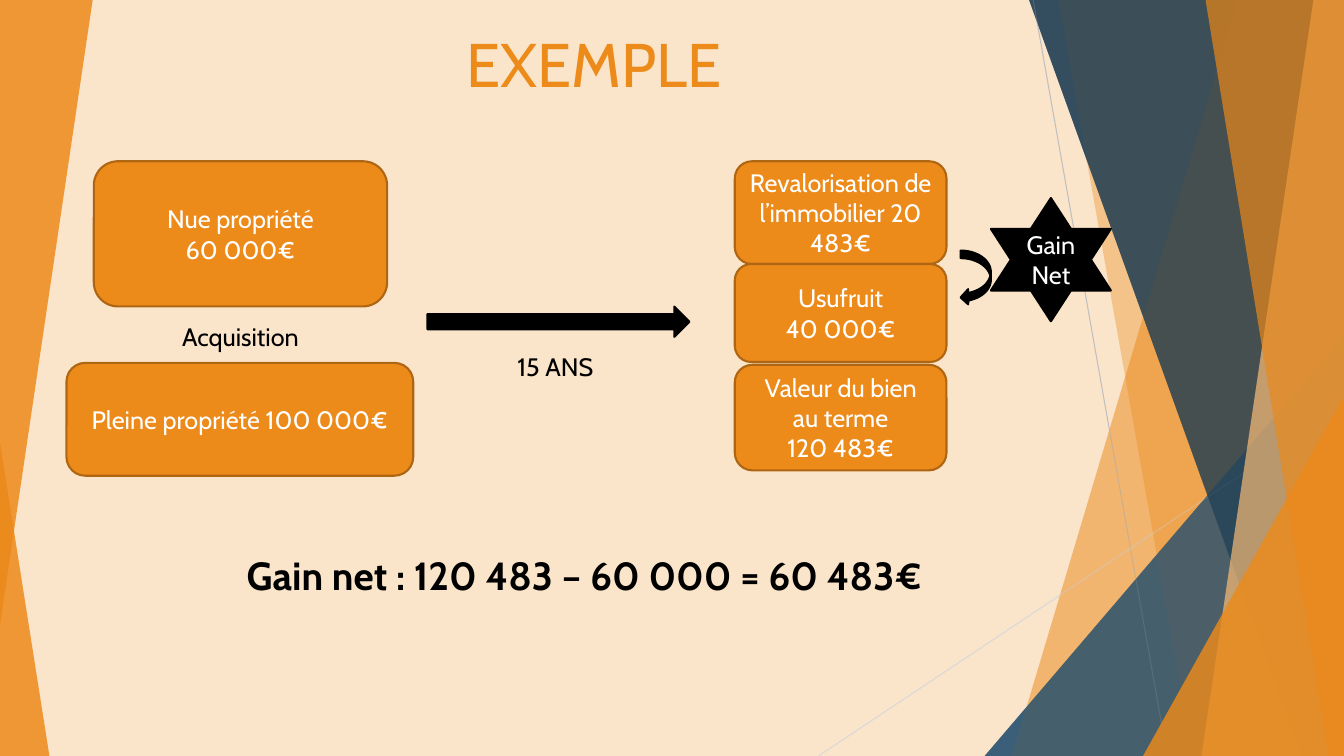
from dataclasses import dataclass

from lxml.etree import SubElement
from pptx import Presentation
from pptx.dml.color import RGBColor
from pptx.enum.shapes import MSO_CONNECTOR, MSO_SHAPE
from pptx.enum.text import MSO_ANCHOR, PP_ALIGN
from pptx.oxml.ns import qn
from pptx.util import Pt

FONT = "Cabin"
ORANGE, ORANGE_EDGE, PEACH = "EC8A1A", "AF6613", "F4B976"
CREAM, BLUE, NAVY = "FAE4CA", "2C5573", "214056"
BLACK, WHITE = "000000", "FFFFFF"
WIDTH, HEIGHT = 960, 540


@dataclass
class Band:
    top_x: float
    bottom_x: float
    fill: str
    opacity: int


@dataclass
class Wedge:
    left: float
    top: float
    width: float
    height: float
    apex: float
    fill: str
    opacity: int
    rotation: int = 0


@dataclass
class Ray:
    start: tuple[float, float]
    end: tuple[float, float]
    color: str


@dataclass
class Block:
    left: float
    top: float
    width: float
    height: float
    lines: tuple[str, ...] = ()
    preset: MSO_SHAPE = MSO_SHAPE.ROUNDED_RECTANGLE
    fill: str = ORANGE
    edge: str = ORANGE_EDGE


@dataclass
class Label:
    left: float
    top: float
    width: float
    height: float
    text: str
    size: int = 18
    bold: bool = False


RIGHT_FACETS = (
    Band(884.2, 722.9, ORANGE, 30),
    Band(756, 851.8, ORANGE, 20),
    Wedge(703.4, 239.8, 256.6, 300.2, 1, BLUE, 72),
    Band(735.1, 929.5, NAVY, 70),
    Band(938.2, 858.2, PEACH, 70),
    Band(861.1, 949, ORANGE, 65),
    Wedge(816.5, 283, 143.5, 257, 1, ORANGE, 80),
)
RAYS = (
    Ray((738, 0), (833.8, HEIGHT), "BFBFBF"),
    Ray((WIDTH, 290.2), (584.6, HEIGHT), "D9D9D9"),
)
BACKDROP = (
    *RIGHT_FACETS,
    Wedge(0, 316, 35.3, 224, 0, ORANGE, 85),
    *RAYS,
    *RIGHT_FACETS,
    Wedge(0, 0, 66.2, 446.4, 1, ORANGE, 85, 180),
)
RESULT_LEFT, RESULT_WIDTH = 524.9, 151.2
BLOCKS = (
    Block(67, 115.2, 209.5, 103.7, ("Nue propriété", "60 000€")),
    Block(47.5, 259.2, 247.7, 80.6, ("Pleine propriété 100 000€",)),
    Block(RESULT_LEFT, 115.2, RESULT_WIDTH, 73.4,
          ("Revalorisation de l’immobilier 20 483€",)),
    Block(RESULT_LEFT, 188.6, RESULT_WIDTH, 70, ("Usufruit", "40 000€")),
    Block(RESULT_LEFT, 260.6, RESULT_WIDTH, 75.4,
          ("Valeur du bien au terme", "120 483€")),
    Block(305.3, 219, 187.2, 21.6, (), MSO_SHAPE.RIGHT_ARROW, BLACK, BLACK),
    Block(707.8, 141.5, 85.7, 88, ("Gain Net",),
          MSO_SHAPE.STAR_6_POINT, BLACK, BLACK),
    Block(686.2, 179, 21.6, 38.9, (),
          MSO_SHAPE.CURVED_LEFT_ARROW, BLACK, BLACK),
)
LABELS = (
    Label(67, 226.1, 209.5, 28.8, "Acquisition"),
    Label(324.7, 247.2, 144, 28.8, "15 ANS"),
    Label(111.6, 390.2, 611.3, 149.8,
          "Gain net : 120 483 – 60 000 = 60 483€", 28, True),
)


def rgb(value: str) -> RGBColor:
    return RGBColor.from_string(value)


def write(frame, lines: tuple[str, ...], size: int, color: str,
          anchor: MSO_ANCHOR, bold: bool = False) -> None:
    frame.word_wrap = True
    frame.vertical_anchor = anchor
    for index, line in enumerate(lines):
        paragraph = frame.add_paragraph() if index else frame.paragraphs[0]
        paragraph.alignment = PP_ALIGN.CENTER
        run = paragraph.add_run()
        run.text = line
        run.font.name = FONT
        run.font.size = Pt(size)
        run.font.bold = bold
        run.font.color.rgb = rgb(color)


def fill_translucent(shape, fill: str, opacity: int) -> None:
    shape.shadow.inherit = False
    shape.fill.solid()
    shape.fill.fore_color.rgb = rgb(fill)
    shape.line.fill.background()
    color = shape.fill._xPr.find(qn("a:solidFill"))[0]
    SubElement(color, qn("a:alpha")).set("val", str(opacity * 1000))


def draw_band(shapes, band: Band) -> None:
    outline = shapes.build_freeform(Pt(band.top_x), 0)
    outline.add_line_segments([
        (Pt(WIDTH), 0), (Pt(WIDTH), Pt(HEIGHT)), (Pt(band.bottom_x), Pt(HEIGHT)),
    ])
    fill_translucent(outline.convert_to_shape(), band.fill, band.opacity)


def draw_wedge(shapes, wedge: Wedge) -> None:
    triangle = shapes.add_shape(
        MSO_SHAPE.ISOSCELES_TRIANGLE, Pt(wedge.left), Pt(wedge.top),
        Pt(wedge.width), Pt(wedge.height))
    triangle.adjustments[0] = wedge.apex
    triangle.rotation = wedge.rotation
    fill_translucent(triangle, wedge.fill, wedge.opacity)


def draw_ray(shapes, ray: Ray) -> None:
    line = shapes.add_connector(
        MSO_CONNECTOR.STRAIGHT, *map(Pt, ray.start), *map(Pt, ray.end))
    line.line.color.rgb = rgb(ray.color)
    line.line.width = Pt(0.75)
    SubElement(line._element.spPr, qn("a:effectLst"))


def draw_block(shapes, block: Block) -> None:
    shape = shapes.add_shape(block.preset, Pt(block.left), Pt(block.top),
                             Pt(block.width), Pt(block.height))
    shape.shadow.inherit = False
    shape.fill.solid()
    shape.fill.fore_color.rgb = rgb(block.fill)
    shape.line.color.rgb = rgb(block.edge)
    shape.line.width = Pt(1.5)
    write(shape.text_frame, block.lines, 18, WHITE, MSO_ANCHOR.MIDDLE)


def draw_label(shapes, label: Label) -> None:
    box = shapes.add_textbox(Pt(label.left), Pt(label.top),
                             Pt(label.width), Pt(label.height))
    write(box.text_frame, (label.text,), label.size, BLACK,
          MSO_ANCHOR.TOP, label.bold)


def main() -> None:
    deck = Presentation()
    deck.slide_width, deck.slide_height = Pt(WIDTH), Pt(HEIGHT)
    slide = deck.slides.add_slide(deck.slide_layouts[5])
    slide.background.fill.solid()
    slide.background.fill.fore_color.rgb = rgb(CREAM)
    title = slide.shapes.title
    title.left, title.top = Pt(118.8), Pt(0)
    title.width, title.height = Pt(611.3), Pt(74.9)
    write(title.text_frame, ("EXEMPLE",), 44, ORANGE, MSO_ANCHOR.BOTTOM)
    painters = {Band: draw_band, Wedge: draw_wedge, Ray: draw_ray,
                Block: draw_block, Label: draw_label}
    for part in (*BACKDROP, *BLOCKS, *LABELS):
        painters[type(part)](slide.shapes, part)
    deck.save("out.pptx")


if __name__ == "__main__":
    main()
